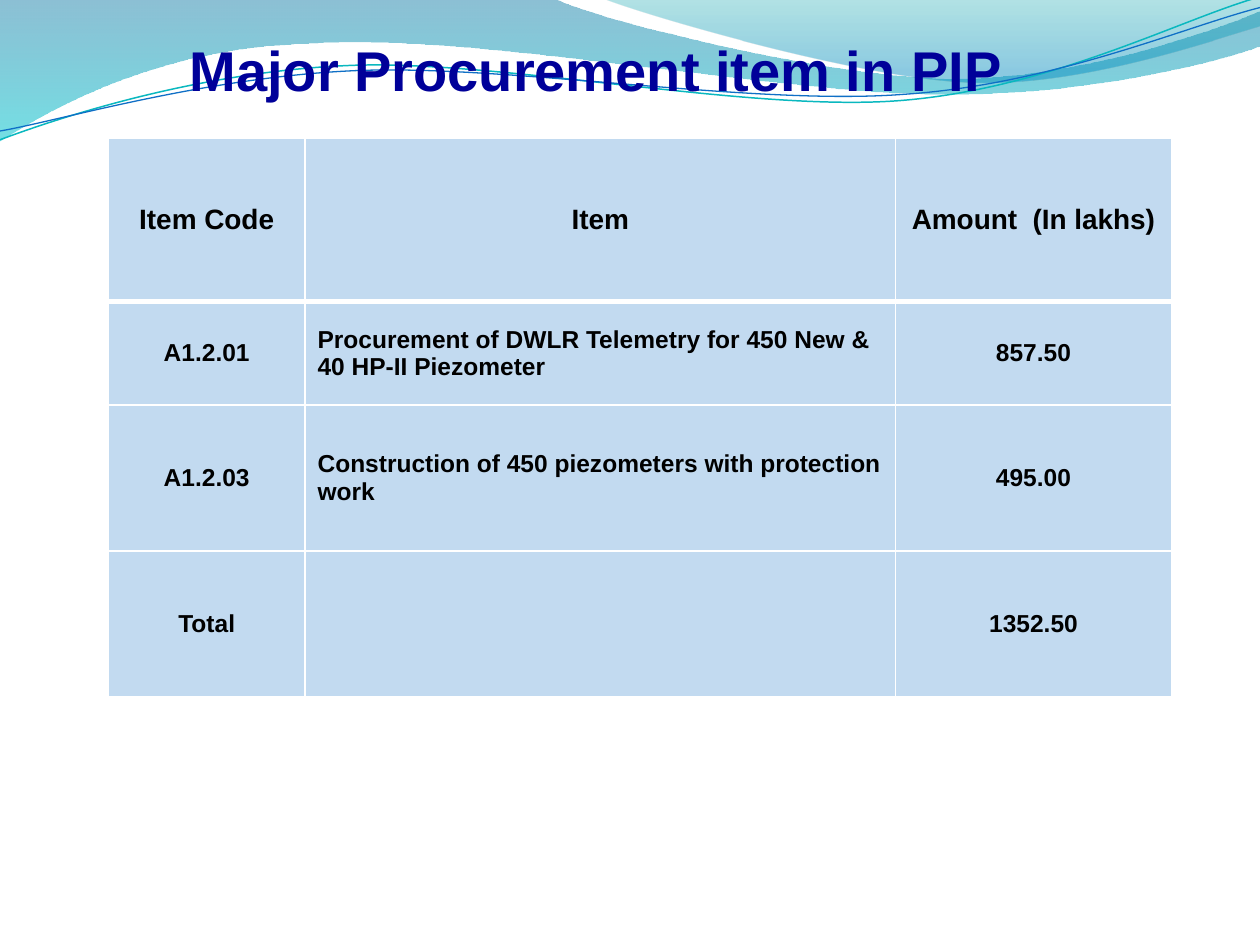
from lxml.etree import SubElement
from pptx import Presentation
from pptx.dml.color import RGBColor
from pptx.enum.text import MSO_ANCHOR, PP_ALIGN
from pptx.oxml.ns import qn
from pptx.util import Pt

WHITE = RGBColor(0xFF, 0xFF, 0xFF)
BLACK = RGBColor(0x00, 0x00, 0x00)
NAVY = RGBColor(0x00, 0x00, 0x99)
BLUE = RGBColor(0x0F, 0x6F, 0xC6)
TEAL = RGBColor(0x0A, 0xB8, 0xBF)
DEEP_BLUE = RGBColor(0x00, 0x74, 0xA1)
CYAN = RGBColor(0x00, 0xC6, 0xCF)
DEEP_TEAL = RGBColor(0x00, 0xA1, 0xA9)
SKY = RGBColor(0x00, 0x8B, 0xBF)


def write_text(frame, text, size, color=BLACK, align=PP_ALIGN.CENTER):
    paragraph = frame.paragraphs[0]
    paragraph.alignment = align
    run = paragraph.add_run()
    run.text = text
    run.font.name = "Arial"
    run.font.size = Pt(size)
    run.font.bold = True
    run.font.color.rgb = color


def set_opacity(fill_element, percent):
    color = fill_element.find(".//" + qn("a:srgbClr"))
    SubElement(color, qn("a:alpha"), val=str(percent * 1000))


prs = Presentation()
prs.slide_width, prs.slide_height = Pt(720), Pt(540)
slide = prs.slides.add_slide(prs.slide_layouts[5])
shapes = slide.shapes

# Waves and lines at the top: two numbers are a line, six a Bézier curve
# Gradient stops: position, color, opacity
waves = [
    dict(start=(0, 0), stops=[(0, DEEP_BLUE, 45), (1, CYAN, 55)], segments=[
        (317, -0.7), (343, 12, 478, 45, 546, 45), (614, 45, 690, 19, 720, 6.5),
        (721, 26), (708, 32, 626, 55, 537, 54), (447, 54, 275, 20, 185, 24.5),
        (93, 26, 33, 60, -0.7, 81), (0, 0)]),
    dict(start=(345, -0.7), stops=[(0, DEEP_TEAL, 30), (0.8, SKY, 45)], segments=[
        (366, 8, 491, 45, 554, 47), (616, 50, 692, 23, 720, 15), (720, 0),
        (345, -0.7)]),
    dict(start=(-1.4, 62.9), line=(TEAL, 0.85), segments=[
        (33.7, 51.6, 114, 29.4, 199.8, 29.9), (284.8, 30.3, 425.8, 67.2, 512.4, 64.8),
        (599, 62.4, 676.4, 25.7, 720.2, 15.6)]),
    dict(start=(-1.1, 57.9), line=(BLUE, 0.75), segments=[
        (33, 53.7, 118.3, 32.5, 204, 33), (290.5, 33.5, 428.9, 63.8, 515.5, 61.3),
        (601.3, 59.7, 678.5, 30.1, 721.4, 21.3)]),
]
for wave in waves:
    points = [(Pt(x), Pt(y)) for segment in wave["segments"]
              for x, y in zip(segment[::2], segment[1::2])]
    builder = shapes.build_freeform(*(Pt(value) for value in wave["start"]))
    builder.add_line_segments(points, close="stops" in wave)
    ribbon = builder.convert_to_shape()
    ribbon.shadow.inherit = False

    # Join the three points of each curve into one Bézier segment
    vertices = ribbon._element.spPr.iter(qn("a:lnTo"))
    vertices = iter(list(vertices))
    for segment in wave["segments"]:
        vertex = next(vertices)
        if len(segment) == 6:
            vertex.tag = qn("a:cubicBezTo")
            for _ in range(2):
                control = next(vertices)
                vertex.append(control[0])
                control.getparent().remove(control)

    if "stops" in wave:
        ribbon.line.fill.background()
        ribbon.fill.gradient()
        ribbon.fill.gradient_angle = 270
        stop_elements = ribbon._element.spPr.iter(qn("a:gs"))
        for stop, element, (position, color, opacity) in zip(
                ribbon.fill.gradient_stops, stop_elements, wave["stops"]):
            stop.position = position
            stop.color.rgb = color
            set_opacity(element, opacity)
    else:
        ribbon.rotation = 357.3
        ribbon.fill.background()
        ribbon.line.color.rgb, width = wave["line"]
        ribbon.line.width = Pt(width)

# Procurement table
rows = [
    ("Item Code", "Item", "Amount  (In lakhs)"),
    ("A1.2.01", "Procurement of DWLR Telemetry for 450 New & 40 HP-II Piezometer", "857.50"),
    ("A1.2.03", "Construction of 450 piezometers with protection work", "495.00"),
    ("Total", "", "1352.50"),
]
column_widths = [112.3, 337.5, 157.7]
row_heights = [93.6, 59, 83.5, 83.5]
items = shapes.add_table(len(rows), len(column_widths), Pt(62), Pt(78.8),
                         Pt(sum(column_widths)), Pt(sum(row_heights))).table
for column, width in zip(items.columns, column_widths):
    column.width = Pt(width)
for r, (row, height) in enumerate(zip(rows, row_heights)):
    items.rows[r].height = Pt(height)
    for c, text in enumerate(row):
        cell = items.cell(r, c)
        cell.vertical_anchor = MSO_ANCHOR.MIDDLE
        if text:
            write_text(cell.text_frame, text, size=14 if r else 16,
                       align=PP_ALIGN.LEFT if r and c == 1 else PP_ALIGN.CENTER)
        # White borders, thick under the header
        properties = cell._tc.get_or_add_tcPr()
        for side in ("L", "R", "T", "B"):
            thick = r == 0 and side == "B"
            border = SubElement(properties, qn("a:ln" + side), w=str(Pt(3 if thick else 1)))
            border_fill = SubElement(border, qn("a:solidFill"))
            SubElement(border_fill, qn("a:srgbClr"), val=str(WHITE))
        cell.fill.solid()
        cell.fill.fore_color.rgb = BLUE
        set_opacity(properties.find(qn("a:solidFill")), 25)

# Title, in front of the waves
title = shapes.title
title.left, title.top, title.width, title.height = Pt(101.2), Pt(16.5), Pt(489.6), Pt(46)
title.text_frame.vertical_anchor = MSO_ANCHOR.TOP
write_text(title.text_frame, "Major Procurement item in PIP", size=32, color=NAVY,
           align=PP_ALIGN.LEFT)
shapes._spTree.append(title._element)

prs.save("out.pptx")
